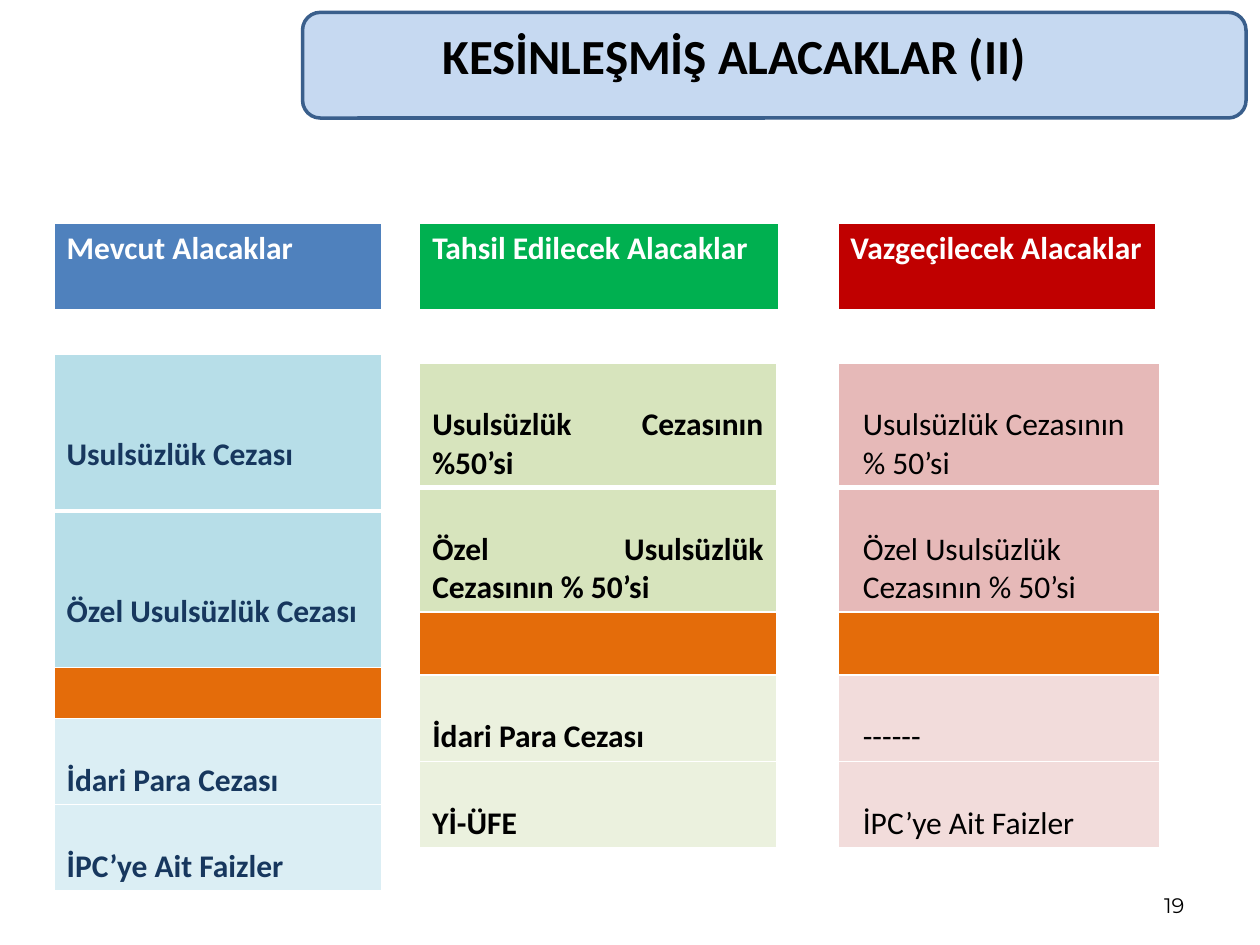
import pptx
import pptx.util
import pptx.dml.color
import pptx.enum.shapes
import pptx.enum.text
import lxml.etree
from dataclasses import dataclass

Cm, Pt = pptx.util.Cm, pptx.util.Pt
ALIGN = pptx.enum.text.PP_ALIGN
ANCHOR = pptx.enum.text.MSO_ANCHOR
SHAPES = pptx.enum.shapes.MSO_SHAPE


@dataclass(frozen=True)
class Theme:
    font: str = "Calibri"
    number_font: str = "Montserrat"
    title_size: int = 28
    text_size: int = 18
    number_size: int = 12
    black: str = "000000"
    white: str = "FFFFFF"
    navy: str = "17375E"
    orange: str = "E46C0A"
    banner: str = "C6D9F1"
    banner_line: str = "3A5F8C"
    thin: float = 0.96
    thick: float = 3


T = Theme()

# Geometry in cm: left, widths of header and body, body top, row heights,
# and the space under the text of the two tall rows
COLUMNS = [
    dict(title="Mevcut Alacaklar", fill="4F81BD", tints=("B7DEE8", "DBEEF4"),
         left=1.09, widths=(6.6, 6.6), top=7.14, tall=3.16, band=1.02, pad=0.74,
         color=T.navy, bold=True, align=ALIGN.LEFT, indent=0,
         items=["Usulsüzlük Cezası", "Özel Usulsüzlük Cezası",
                "İdari Para Cezası", "İPC’ye Ait Faizler"]),
    dict(title="Tahsil Edilecek Alacaklar", fill="00B050", tints=("D7E4BD", "EBF1DE"),
         left=8.46, widths=(7.24, 7.19), top=7.32, tall=2.51, band=1.27, pad=0.1,
         color=T.black, bold=True, align=ALIGN.JUSTIFY, indent=0,
         items=["Usulsüzlük Cezasının %50’si", "Özel Usulsüzlük Cezasının % 50’si",
                "İdari Para Cezası", "Yİ-ÜFE"]),
    dict(title="Vazgeçilecek Alacaklar", fill="C00000", tints=("E6B9B8", "F2DCDB"),
         left=16.89, widths=(6.4, 6.48), top=7.32, tall=2.51, band=1.27, pad=0.1,
         color=T.black, bold=False, align=ALIGN.LEFT, indent=0.25,
         items=["Usulsüzlük Cezasının % 50’si", "Özel Usulsüzlük Cezasının % 50’si",
                "------", "İPC’ye Ait Faizler"]),
]
HEADER_TOP, HEADER_HEIGHT, SHORT_ROW = 4.5, 1.78, 1.74


def rgb(value):
    return pptx.dml.color.RGBColor.from_string(value)


def set_attrs(obj, **values):
    for name, value in values.items():
        setattr(obj, name, value)


def write(p, text, size, color, bold=False, font=T.font, align=ALIGN.LEFT):
    p.alignment = align
    r = p.add_run()
    r.text = text
    set_attrs(r.font, name=font, size=Pt(size), bold=bold)
    r.font.color.rgb = rgb(color)


def set_borders(cell, top, bottom):
    """Give a cell white borders; top and bottom are widths in points."""
    tc_pr = cell._tc.get_or_add_tcPr()
    ns = pptx.oxml.ns.qn
    for side, width in dict(L=T.thin, R=T.thin, T=top, B=bottom).items():
        ln = lxml.etree.SubElement(tc_pr, ns(f"a:ln{side}"), w=str(Pt(width)))
        fill = lxml.etree.SubElement(ln, ns("a:solidFill"))
        lxml.etree.SubElement(fill, ns("a:srgbClr"), val=T.white)


def add_column_table(s, left, top, width, heights):
    table = s.shapes.add_table(len(heights), 1, Cm(left), Cm(top),
                               Cm(width), Cm(sum(heights))).table
    set_attrs(table, first_row=False, horz_banding=False)
    for row, height in zip(table.rows, heights):
        row.height = Cm(height)
    return table


def style_cell(cell, fill, top=T.thin, bottom=T.thin, **layout):
    set_borders(cell, top, bottom)
    cell.fill.solid()
    cell.fill.fore_color.rgb = rgb(fill)
    set_attrs(cell, **layout)


def add_header(s, column):
    table = add_column_table(s, column["left"], HEADER_TOP, column["widths"][0],
                             [HEADER_HEIGHT])
    cell = table.cell(0, 0)
    style_cell(cell, column["fill"], bottom=T.thick, margin_right=Cm(0.1))
    write(cell.text_frame.paragraphs[0], column["title"], T.text_size, T.white, True)


def add_body(s, column):
    """Two tall rows, an orange band and two short rows."""
    tall, (dark, light) = column["tall"], column["tints"]
    first, second, third, fourth = column["items"]
    rows = [  # text, fill, height, bottom margin, top and bottom border
        (first, dark, tall, column["pad"], T.thin, T.thick),
        (second, dark, tall, column["pad"], T.thick, T.thin),
        ("", T.orange, column["band"], 0.1, T.thin, T.thin),
        (third, light, SHORT_ROW, 0.1, T.thin, T.thin),
        (fourth, light, SHORT_ROW, 0.1, T.thin, T.thin),
    ]
    table = add_column_table(s, column["left"], column["top"], column["widths"][1],
                             [row[2] for row in rows])
    for i, (text, fill, _, pad, top, bottom) in enumerate(rows):
        cell = table.cell(i, 0)
        style_cell(cell, fill, top, bottom, vertical_anchor=ANCHOR.BOTTOM,
                   margin_top=Cm(0.1), margin_bottom=Cm(pad))
        p = cell.text_frame.paragraphs[0]
        if text:
            write(p, text, T.text_size, column["color"], column["bold"],
                  align=column["align"])
            p._p.get_or_add_pPr().set("marL", str(Cm(column["indent"])))
        else:
            p.font.size = Pt(T.number_size)


def add_text(s, box, text, anchor, **style):
    tf = s.shapes.add_textbox(*map(Cm, box)).text_frame
    set_attrs(tf, word_wrap=True, vertical_anchor=anchor)
    write(tf.paragraphs[0], text, **style)


def add_banner(s, left, top, width, height):
    sp = s.shapes.add_shape(SHAPES.ROUNDED_RECTANGLE,
                            *map(Cm, (left, top, width, height)))
    sp.shadow.inherit = False
    sp.fill.solid()
    sp.fill.fore_color.rgb = rgb(T.banner)
    sp.line.color.rgb = rgb(T.banner_line)
    sp.line.width = Pt(2)
    add_text(s, (left + 2.06, top + 0.13, 13.27, 1.45), "KESİNLEŞMİŞ ALACAKLAR (II)",
             ANCHOR.TOP, size=T.title_size, color=T.black, bold=True,
             align=ALIGN.CENTER)


def main():
    prs = pptx.Presentation()
    set_attrs(prs, slide_width=Cm(25.4), slide_height=Cm(19.05))
    s = prs.slides.add_slide(prs.slide_layouts[6])
    add_banner(s, 6.1, 0.25, 19.02, 2.13)
    for column in COLUMNS:
        add_header(s, column)
        add_body(s, column)
    add_text(s, (18.21, 17.35, 5.92, 1.27), "19", ANCHOR.BOTTOM, size=T.number_size,
             color=T.black, font=T.number_font, align=ALIGN.RIGHT)
    prs.save("out.pptx")


if __name__ == "__main__":
    main()
